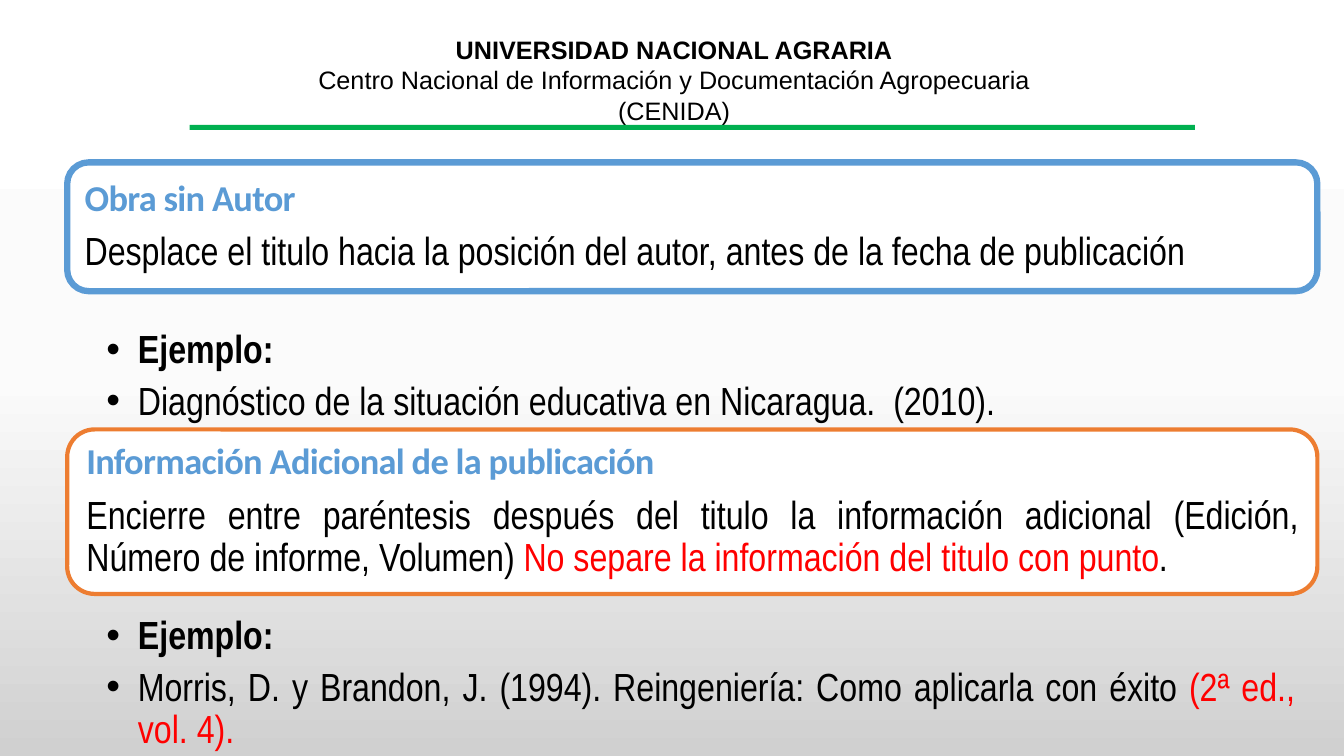
from copy import deepcopy
from pptx import Presentation
from pptx.dml import color
from pptx.enum import shapes, text
from pptx.oxml import ns
from pptx.util import Pt

HEAD = [
    [("UNIVERSIDAD NACIONAL AGRARIA", "strong")],
    [("Centro Nacional de Información y Documentación Agropecuaria", "head")],
    [("(CENIDA)", "head")],
]
RULES = [
    {
        "top": 116, "high": 92, "edge": "blue", "line": 4.5, "align": "LEFT",
        "text": [
            [("Obra sin Autor", "label")],
            [("Desplace el titulo hacia la posición del autor, "
              "antes de la fecha de publicación", "body")],
        ],
    },
    {
        "top": 306.75, "high": 117.5, "edge": "orange", "line": 3, "align": "JUSTIFY",
        "text": [
            [("Información Adicional de la publicación", "label")],
            [("Encierre entre paréntesis después del titulo la información adicional "
              "(Edición, Número de informe, Volumen) ", "body"),
             ("No separe la información del titulo con punto", "alert"),
             (".", "body")],
        ],
    },
]
LISTS = [
    {
        "top": 232.5, "high": 69,
        "text": [
            [("Ejemplo:", "bold")],
            [("Diagnóstico de la situación educativa en Nicaragua.  (2010).", "body")],
        ],
    },
    {
        "top": 437, "high": 98,
        "text": [
            [("Ejemplo:", "bold")],
            [("Morris, D. y Brandon, J. (1994). Reingeniería: Como aplicarla con éxito ", "body"),
             ("(2ª ed., vol. 4).", "alert")],
        ],
    },
]

THEME = {
    "ink": {
        "black": "000000", "white": "FFFFFF", "blue": "5B9BD5",
        "orange": "ED7D31", "green": "00B050", "red": "FF0000",
    },
    "back": [(0, "FFFFFF"), (0.5, "FBFBFB"), (1, "D0D0D0")],
    "font": {
        "strong": ("Arial", 18, True, "black"),
        "head": ("Arial", 18, False, "black"),
        "label": ("Calibri", 26, True, "blue"),
        "body": ("Arial Narrow", 28, False, "black"),
        "bold": ("Arial Narrow", 28, True, "black"),
        "alert": ("Arial Narrow", 28, False, "red"),
    },
}
LEFT, WIDE = 48, 893
INDENT = 22.5


def ink(name):
    return color.RGBColor.from_string(THEME["ink"][name])


def apply(item, values):
    for key, value in values.items():
        setattr(item, key, value)


def place(shape, left, top, wide, high):
    box = dict(left=left, top=top, width=wide, height=high)
    apply(shape, {key: Pt(size) for key, size in box.items()})


def write(shape, paras, frame, para, inset):
    body = shape.text_frame
    apply(body, {"word_wrap": True, "auto_size": text.MSO_AUTO_SIZE.NONE, **frame})
    sides = ("margin_left", "margin_top", "margin_right", "margin_bottom")
    apply(body, {side: Pt(size) for side, size in zip(sides, inset)})
    for pos, parts in enumerate(paras):
        line = body.add_paragraph() if pos else body.paragraphs[0]
        apply(line, {"space_before": Pt(0), **para})
        for words, style in parts:
            run = line.add_run()
            run.text = words
            name, size, bold, tint = THEME["font"][style]
            apply(run.font, {"name": name, "size": Pt(size), "bold": bold})
            run.font.color.rgb = ink(tint)


def draw(slide, kind, spot, fill, edge=None, line=0):
    shape = slide.shapes.add_shape(kind, 0, 0, 0, 0)
    place(shape, *spot)
    shape.shadow.inherit = False
    shape.fill.solid()
    shape.fill.fore_color.rgb = ink(fill)
    if edge:
        shape.line.color.rgb = ink(edge)
        shape.line.width = Pt(line)
    else:
        shape.line.fill.background()
    return shape


def paint(slide):
    fill = slide.background.fill
    fill.gradient()
    fill.gradient_angle = 270
    stops = slide.element.find(".//" + ns.qn("a:gsLst"))
    stops.append(deepcopy(stops[-1]))
    for stop, (pos, tint) in zip(fill.gradient_stops, THEME["back"]):
        stop.position = pos
        stop.color.rgb = color.RGBColor.from_string(tint)


def main():
    deck = Presentation()
    deck.slide_width, deck.slide_height = Pt(960), Pt(540)
    slide = deck.slides.add_slide(deck.slide_layouts[3])
    paint(slide)
    title, *bodies = slide.placeholders
    top, mid = text.MSO_ANCHOR.TOP, text.MSO_ANCHOR.MIDDLE
    align = text.PP_ALIGN

    place(title, 206.5, 21, 550, 62.5)
    write(title, HEAD, {"vertical_anchor": top},
          {"alignment": align.CENTER, "line_spacing": 1.0}, (7.2, 3.6, 7.2, 3.6))
    draw(slide, shapes.MSO_SHAPE.RECTANGLE, (135.5, 89.25, 718, 3.5), "green")

    for rule in RULES:
        box = draw(slide, shapes.MSO_SHAPE.ROUNDED_RECTANGLE,
                   (LEFT, rule["top"], WIDE, rule["high"]),
                   "white", rule["edge"], rule["line"])
        write(box, rule["text"], {"vertical_anchor": mid},
              {"alignment": align.LEFT, "line_spacing": 0.9, "space_after": Pt(9)},
              (8, 8, 8, 8))
        box.text_frame.paragraphs[-1].alignment = align[rule["align"]]
        label = next(box.element.iter(ns.qn("a:rPr")))
        label.set("spc", "-50")

    for body, item in zip(bodies, LISTS):
        place(body, LEFT, item["top"], WIDE, item["high"])
        write(body, item["text"], {"vertical_anchor": top},
              {"alignment": align.JUSTIFY, "line_spacing": 0.9, "space_after": Pt(6.5)},
              (28, 3, 16, 3))
        for props in body.element.iter(ns.qn("a:pPr")):
            props.set("marL", str(Pt(INDENT)))
            props.set("indent", str(-Pt(INDENT)))

    deck.save("out.pptx")


if __name__ == "__main__":
    main()
